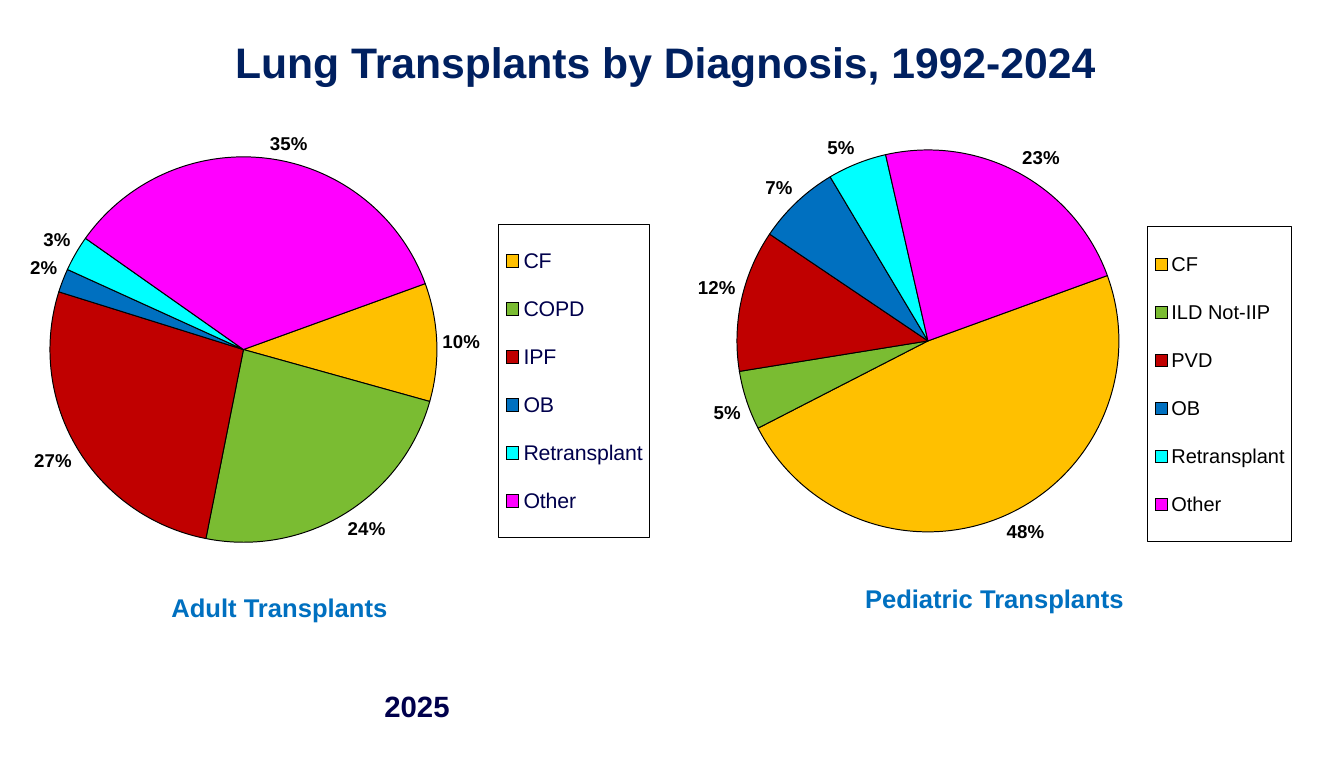
import pptx
import pptx.chart.data
import pptx.dml.color
import pptx.enum.chart
import pptx.enum.text
import pptx.oxml
import pptx.oxml.ns
import pptx.util

COLORS = {
    "title": "002060", "caption": "0070C0", "navy": "00004C", "black": "000000",
    "CF": "FFC000", "second": "7ABC32", "third": "C00000", "OB": "0070C0",
    "Retransplant": "00FFFF", "Other": "FF00FF",
}
SLICES = ["CF", "second", "third", "OB", "Retransplant", "Other"]
FONT = "Arial"
PX = 9525


def rgb(value):
    return pptx.dml.color.RGBColor.from_string(value)


def chart_xml(body):
    """Turn chart markup into an element, adding its namespaces."""
    names = pptx.oxml.ns.nsdecls("c", "a")
    tag, rest = body.split(">", 1)
    return pptx.oxml.parse_xml(f"{tag} {names}>{rest}")


def manual_layout(area, frame, target=""):
    """Return a layout that puts a chart part at a slide area, both in px."""
    left, top, width, height = frame
    shares = {
        "x": (area[0] - left) / width, "y": (area[1] - top) / height,
        "w": area[2] / width, "h": area[3] / height,
    }
    modes = '<c:xMode val="edge"/><c:yMode val="edge"/>'
    values = "".join(f'<c:{key} val="{share:.4f}"/>' for key, share in shares.items())
    return chart_xml(f"<c:layout><c:manualLayout>{target}{modes}{values}"
                     "</c:manualLayout></c:layout>")


class Slide:
    def __init__(self, deck):
        self.page = deck.slides.add_slide(deck.slide_layouts[5])

    def style(self, font, size, color, bold=False):
        font.name = FONT
        font.size = pptx.util.Pt(size)
        font.bold = bold
        font.color.rgb = rgb(color)

    def set_text(self, box, text, size, color):
        frame = box.text_frame
        frame.word_wrap = True
        frame.auto_size = pptx.enum.text.MSO_AUTO_SIZE.NONE
        para = frame.paragraphs[0]
        para.text = text
        para.alignment = pptx.enum.text.PP_ALIGN.CENTER
        self.style(para.font, size, color, bold=True)

    def title(self, text, area):
        box = self.page.shapes.title
        box.left, box.top, box.width, box.height = (n * PX for n in area)
        box.text_frame.vertical_anchor = pptx.enum.text.MSO_ANCHOR.MIDDLE
        self.set_text(box, text, 32, COLORS["title"])

    def label(self, text, area, size, color):
        box = self.page.shapes.add_textbox(*(n * PX for n in area))
        self.set_text(box, text, size, color)

    def pie(self, shares, frame, plot, key, key_size, key_color):
        """Add a pie with its plot and boxed legend at fixed slide areas."""
        data = pptx.chart.data.CategoryChartData(number_format="0%")
        data.categories = list(shares)
        data.add_series("Series 1", list(shares.values()))
        chart = self.page.shapes.add_chart(
            pptx.enum.chart.XL_CHART_TYPE.PIE, *(n * PX for n in frame), data).chart
        chart.has_title = False
        self.style(chart.font, 18, COLORS["black"])

        pie = chart.plots[0]
        pie.vary_by_categories = True
        for index, name in enumerate(SLICES):
            look = pie.series[0].points[index].format
            look.fill.solid()
            look.fill.fore_color.rgb = rgb(COLORS[name])
            look.line.color.rgb = rgb(COLORS["black"])
            look.line.width = pptx.util.Pt(0.75)

        pie.has_data_labels = True
        labels = pie.data_labels
        labels.show_value = True
        labels.show_percentage = False
        labels.number_format = "0%"
        labels.number_format_is_linked = False
        labels.position = pptx.enum.chart.XL_LABEL_POSITION.OUTSIDE_END
        self.style(labels.font, 14, COLORS["black"], bold=True)

        chart.has_legend = True
        legend = chart.legend
        legend.position = pptx.enum.chart.XL_LEGEND_POSITION.RIGHT
        legend.include_in_layout = False
        self.style(legend.font, key_size, key_color)
        self.arrange(chart, frame, plot, key)

    def arrange(self, chart, frame, plot, key):
        """Turn the first slice, place plot and legend, and box the legend."""
        name = pptx.oxml.ns.qn
        plot_area = chart.element.find(".//" + name("c:plotArea"))
        legend = chart.element.find(".//" + name("c:legend"))
        for part in (plot_area, legend):
            for layout in part.findall(name("c:layout")):
                part.remove(layout)
        plot_area.insert(0, manual_layout(plot, frame, '<c:layoutTarget val="inner"/>'))
        legend.find(name("c:legendPos")).addnext(manual_layout(key, frame))
        legend.find(name("c:overlay")).addnext(chart_xml(
            '<c:spPr><a:noFill/><a:ln w="9525"><a:solidFill>'
            f'<a:srgbClr val="{COLORS["black"]}"/></a:solidFill></a:ln></c:spPr>'))

        pie = plot_area.find(name("c:pieChart"))
        for angle in pie.findall(name("c:firstSliceAng")):
            pie.remove(angle)
        pie.append(chart_xml('<c:firstSliceAng val="70"></c:firstSliceAng>'))


def main():
    deck = pptx.Presentation()
    deck.slide_width = 1344 * PX
    deck.slide_height = 768 * PX
    slide = Slide(deck)
    slide.title("Lung Transplants by Diagnosis, 1992-2024", (154, 18, 1024, 86))
    adult = {"CF": 0.10, "COPD": 0.24, "IPF": 0.27, "OB": 0.02,
             "Retransplant": 0.03, "Other": 0.35}
    pediatric = {"CF": 0.48, "ILD Not-IIP": 0.05, "PVD": 0.12, "OB": 0.07,
                 "Retransplant": 0.05, "Other": 0.23}
    slide.pie(adult, (14, 132, 663, 492), (50, 155, 387, 387),
              (499, 223, 151, 314), 16, COLORS["navy"])
    slide.pie(pediatric, (672, 83, 672, 560), (737, 150, 382, 382),
              (1148, 227, 144, 315), 15, COLORS["black"])
    slide.label("Adult Transplants", (134, 587, 291, 49), 19.2, COLORS["caption"])
    slide.label("Pediatric Transplants", (849, 578, 291, 49), 19.2, COLORS["caption"])
    slide.label("2025", (318, 683, 198, 45), 22, COLORS["navy"])
    deck.save("out.pptx")


if __name__ == "__main__":
    main()
